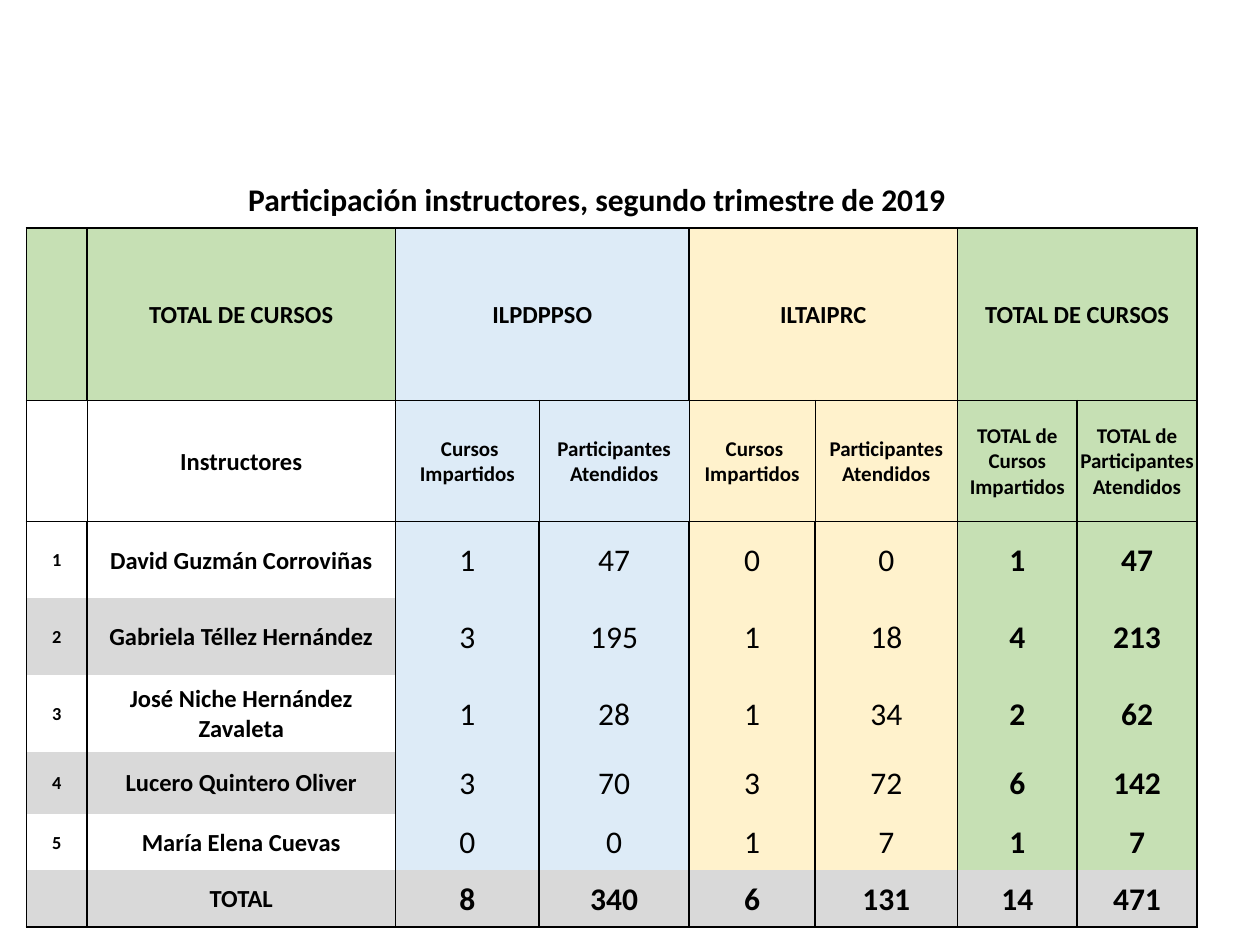
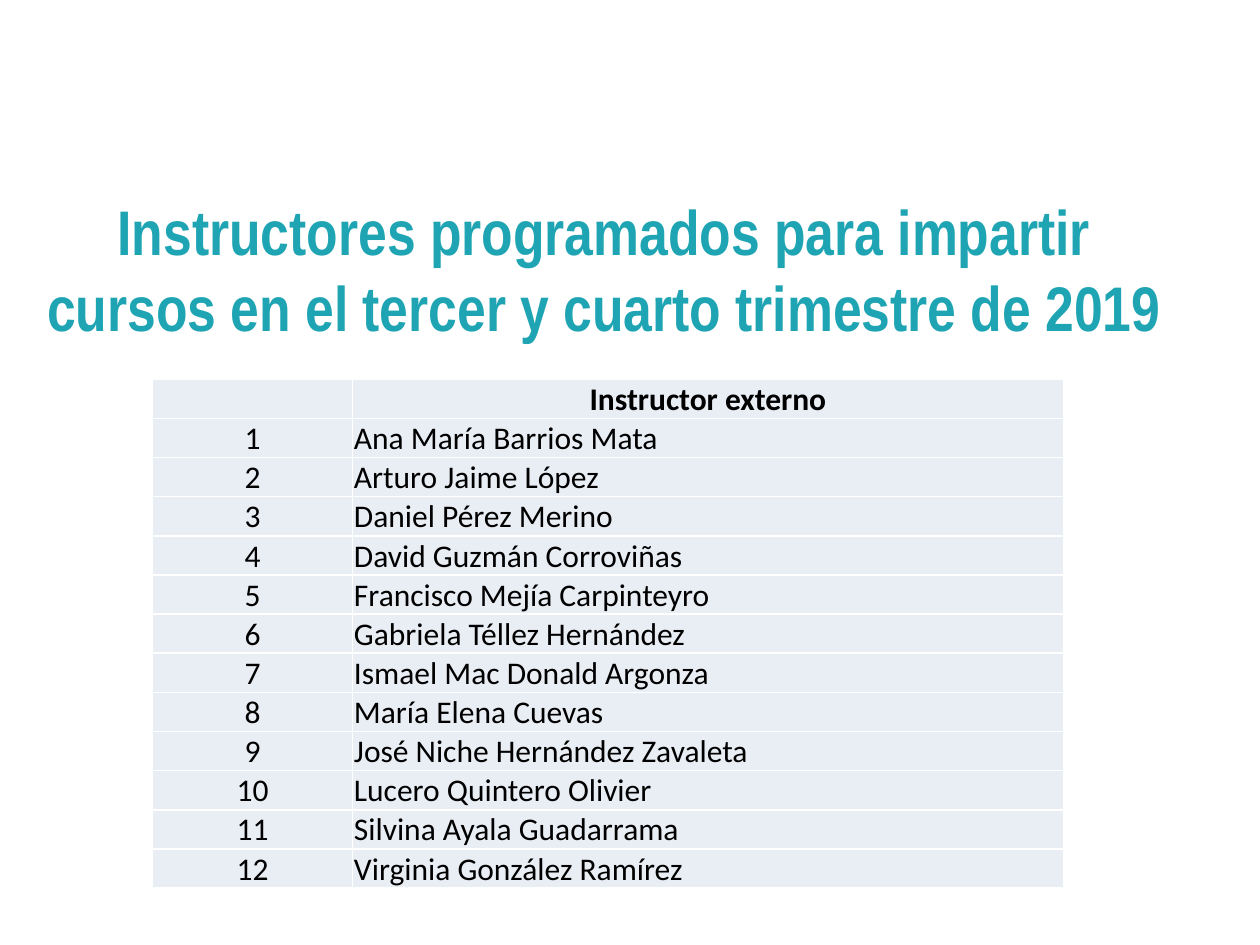
from pptx import Presentation
from pptx.dml.color import RGBColor
from pptx.enum.text import MSO_ANCHOR, PP_ALIGN
from pptx.oxml.ns import qn
from pptx.util import Inches, Pt
from lxml.etree import SubElement

COLS, ROWS = 100, 75
HUES = {
    "ink": "000000", "teal": "1EA4B2", "white": "FFFFFF", "gray": "D9D9D9",
    "green": "C6E0B4", "blue": "DDEBF7", "cream": "FFF2CC", "pale": "E9EDF4",
}


class Deck:
    def __init__(self):
        self.prs = Presentation()
        self.prs.slide_width = Inches(10)
        self.prs.slide_height = Inches(7.5)
        self.slide = None

    def x(self, cols):
        return round(self.prs.slide_width * cols / COLS)

    def y(self, rows):
        return round(self.prs.slide_height * rows / ROWS)

    def page(self):
        self.slide = self.prs.slides.add_slide(self.prs.slide_layouts[6])

    def label(self, frame, text, size, bold=True, hue="ink",
              face="Calibri", align=PP_ALIGN.CENTER):
        par = frame.paragraphs[0]
        par.alignment = align
        run = par.add_run()
        run.text = text
        font = run.font
        font.size, font.bold, font.name = Pt(size), bold, face
        font.color.rgb = RGBColor.from_string(HUES[hue])

    def title(self, text, left, top, wide, high, size, **look):
        box = self.slide.shapes.add_textbox(
            self.x(left), self.y(top), self.x(wide), self.y(high))
        box.text_frame.word_wrap = True
        self.label(box.text_frame, text, size, **look)

    def table(self, left, top, wides, highs):
        shape = self.slide.shapes.add_table(
            len(highs), len(wides), self.x(left), self.y(top),
            self.x(sum(wides)), self.y(sum(highs)))
        table = shape.table
        table.first_row = table.horz_banding = False
        for col, wide in zip(table.columns, wides):
            col.width = self.x(wide)
        for row, high in zip(table.rows, highs):
            row.height = self.y(high)
        return table

    def cell(self, cell, text, fill, edges, hue="ink",
             anchor=MSO_ANCHOR.MIDDLE, **look):
        """Fill one cell; edges are left, right, top, bottom widths in points."""
        cell.margin_left = cell.margin_right = self.x(0.1)
        cell.margin_top, cell.margin_bottom = self.y(0.1), 0
        cell.vertical_anchor = anchor
        props = cell._tc.get_or_add_tcPr()
        for side, width in zip("LRTB", edges):
            line = SubElement(props, qn(f"a:ln{side}"), w=str(Pt(width)))
            if width:
                paint = SubElement(line, qn("a:solidFill"))
                SubElement(paint, qn("a:srgbClr"), val=HUES[hue])
            else:
                SubElement(line, qn("a:noFill"))
        cell.fill.solid()
        cell.fill.fore_color.rgb = RGBColor.from_string(HUES[fill])
        if text:
            self.label(cell.text_frame, text, **look)


GROUPS = ["", "TOTAL DE CURSOS", "ILPDPPSO", "", "ILTAIPRC", "",
          "TOTAL DE CURSOS", ""]
LABELS = ["", "Instructores"] + [" Cursos Impartidos", "Participantes Atendidos"] * 2 + [
    "TOTAL de Cursos Impartidos", "TOTAL de Participantes Atendidos"]
SCORES = [
    ("1", "David Guzmán Corroviñas", 1, 47, 0, 0, 1, 47),
    ("2", "Gabriela Téllez Hernández", 3, 195, 1, 18, 4, 213),
    ("3", "José Niche Hernández Zavaleta", 1, 28, 1, 34, 2, 62),
    ("4", "Lucero Quintero Oliver", 3, 70, 3, 72, 6, 142),
    ("5", "María Elena Cuevas", 0, 0, 1, 7, 1, 7),
    ("", "TOTAL", 8, 340, 6, 131, 14, 471),
]
TINTS = ["white"] * 2 + ["blue"] * 2 + ["cream"] * 2 + ["green"] * 2
NAMES = [
    "Ana María Barrios Mata", "Arturo Jaime López", "Daniel Pérez Merino",
    "David Guzmán Corroviñas", "Francisco Mejía Carpinteyro",
    "Gabriela Téllez Hernández", "Ismael Mac Donald Argonza",
    "María Elena Cuevas", "José Niche Hernández Zavaleta",
    "Lucero Quintero Olivier", "Silvina Ayala Guadarrama",
    "Virginia González Ramírez",
]


def score_fill(row, col, last):
    if row == last:
        return "gray"
    if col < 2:
        if row == 0:
            return "green"
        return "gray" if row in (3, 5) else "white"
    return TINTS[col]


def score_size(row, col):
    if row < 2:
        return 12 if row == 1 and col > 1 else 14
    return (10.5, 14)[col] if col < 2 else 18


def score_edges(row, col, last):
    """Thin inner uprights in the label row; level lines round the heads only."""
    left = 0.5 if row == 1 and 0 < col < 6 else 1
    right = 0.5 if row == 1 and col < 5 else 1
    return left, right, int(row < 3), int(row < 2 or row == last)


def scores(deck):
    deck.page()
    table = deck.table(2.1, 18.1, [4.8, 24.5, 11.4, 11.9, 10, 11.3, 9.5, 9.5],
                       [13.7, 9.6, 6.1, 6.1, 6.1, 4.9, 4.5, 4.5])
    for col in (2, 4, 6):
        table.cell(0, col).merge(table.cell(0, col + 1))
    grid = [GROUPS, LABELS, *SCORES]
    last = len(grid) - 1
    for row, texts in enumerate(grid):
        for col, text in enumerate(texts):
            plain = 1 < row < last and 1 < col < 6
            deck.cell(table.cell(row, col), str(text),
                      score_fill(row, col, last), score_edges(row, col, last),
                      size=score_size(row, col), bold=not plain)
    deck.title("Participación instructores, segundo trimestre de 2019",
               18.1, 13.8, 58.6, 7.1, 18)


def roster(deck):
    deck.page()
    deck.title("Instructores programados para impartir cursos en el tercer "
               "y cuarto trimestre de 2019", 1.5, 14.8, 92.9, 13.1, 36,
               hue="teal", face="Arial Narrow")
    grid = [("", "Instructor externo")]
    grid += [(str(num), name) for num, name in enumerate(NAMES, 1)]
    table = deck.table(12.1, 30.1, [15.9, 56.4], [3.11] * len(grid))
    for row, texts in enumerate(grid):
        for col, text in enumerate(texts):
            align = PP_ALIGN.LEFT if row and col else PP_ALIGN.CENTER
            deck.cell(table.cell(row, col), text, "pale", [1] * 4, hue="white",
                      anchor=MSO_ANCHOR.BOTTOM, size=18, bold=row == 0,
                      align=align)


def main():
    deck = Deck()
    scores(deck)
    roster(deck)
    deck.prs.save("out.pptx")


if __name__ == "__main__":
    main()
